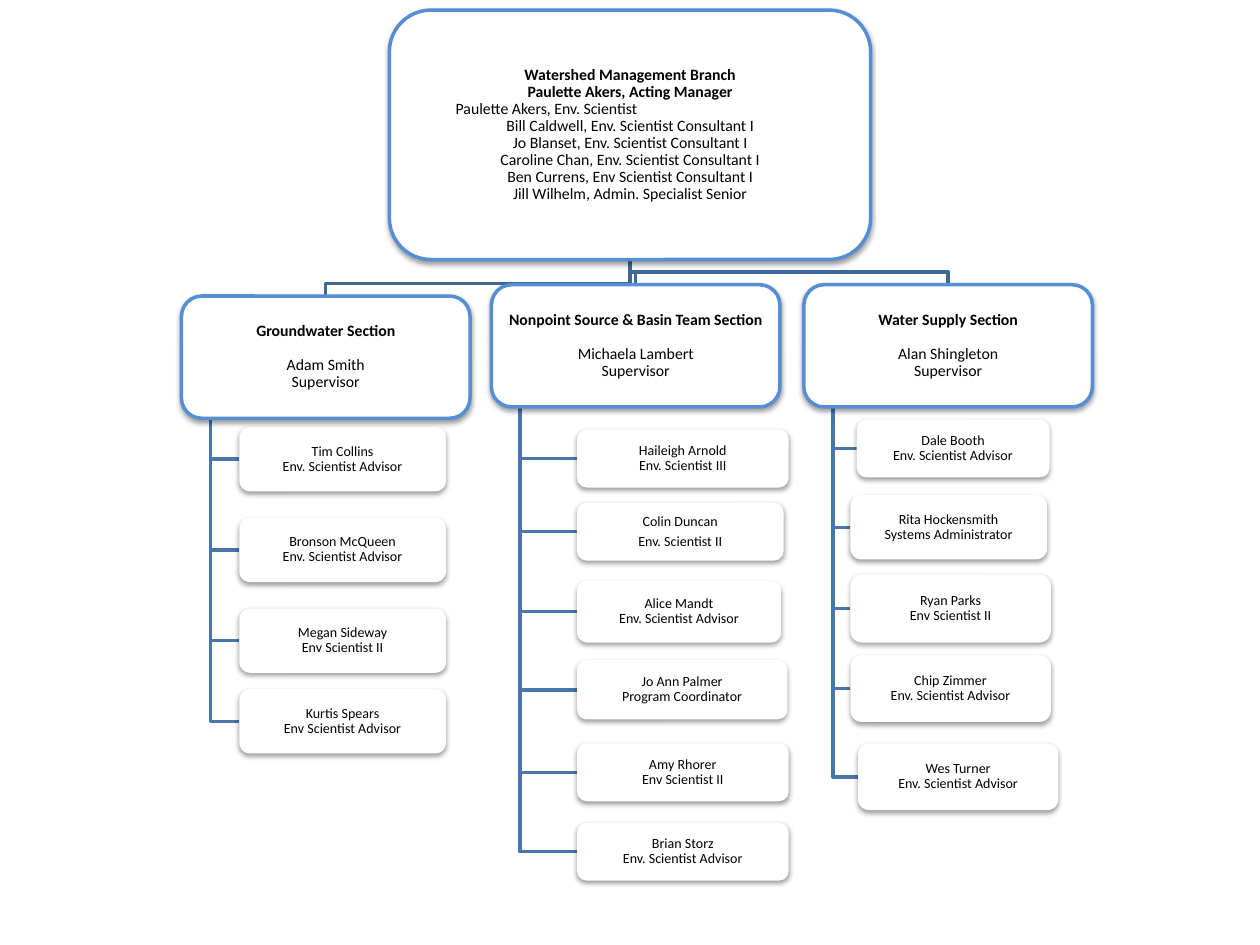
from dataclasses import dataclass

from lxml.etree import SubElement
from pptx import Presentation
from pptx.dml.color import RGBColor
from pptx.enum.shapes import MSO_SHAPE
from pptx.enum.text import MSO_ANCHOR, PP_ALIGN
from pptx.oxml.ns import qn
from pptx.util import Inches, Pt

COLORS = {
    "box": "FFFFFF",
    "border": "558ED5",
    "text": "000000",
    "branch_line": "3F6797",
    "staff_line": "4875AC",
    "shadow": "000000",
}
FONT = "Calibri"

# Grid of 100 columns by 75 rows; one unit is a column or a row
SLIDE_W, SLIDE_H = Inches(10), Inches(7.5)
UNIT = SLIDE_W / 100


@dataclass
class Box:
    x: float
    y: float
    w: float
    h: float

    @property
    def center(self):
        return self.x + self.w / 2

    @property
    def middle(self):
        return self.y + self.h / 2

    @property
    def bottom(self):
        return self.y + self.h

    def inner(self, dx, dy, w, h):
        return Box(self.x + dx, self.y + dy, w, h)


BRANCH_BOX = Box(30.9, 0.8, 38.2, 19.8)
BRANCH_HEADS = ["Watershed Management Branch", "Paulette Akers, Acting Manager"]
BRANCH_STAFF = [
    "Paulette Akers, Env. Scientist",
    "Bill Caldwell, Env. Scientist Consultant I",
    "Jo Blanset, Env. Scientist Consultant I",
    "Caroline Chan, Env. Scientist Consultant I",
    "Ben Currens, Env Scientist Consultant I",
    "Jill Wilhelm, Admin. Specialist Senior",
]

# Section: title, supervisor, left, top, staff
# Staff: name, role, offset in the section (dx, dy), width, height
SECTION_W, SECTION_H = 22.9, 9.7
ADVISOR = "Env. Scientist Advisor"
SECTIONS = [
    ("Groundwater Section", "Adam Smith", 14.4, 23.5, [
        ("Tim Collins", ADVISOR, 4.6, 10.4, 16.4, 5.1),
        ("Bronson McQueen", ADVISOR, 4.6, 17.6, 16.4, 5.1),
        ("Megan Sideway", "Env Scientist II", 4.6, 24.8, 16.4, 5.1),
        ("Kurtis Spears", "Env Scientist Advisor", 4.6, 31.2, 16.4, 5.1),
    ]),
    ("Nonpoint Source & Basin Team Section", "Michaela Lambert", 39, 22.6, [
        ("Haileigh Arnold", "Env. Scientist III", 6.8, 11.5, 16.8, 4.6),
        ("Colin Duncan", "Env. Scientist II", 6.8, 17.3, 16.4, 4.6),
        ("Alice Mandt", ADVISOR, 6.8, 23.5, 16.2, 4.9),
        ("Jo Ann Palmer", "Program Coordinator", 6.8, 29.8, 16.7, 4.7),
        ("Amy Rhorer", "Env Scientist II", 6.8, 36.4, 16.8, 4.6),
        ("Brian Storz", ADVISOR, 6.8, 42.7, 16.8, 4.6),
    ]),
    ("Water Supply Section", "Alan Shingleton", 63.8, 22.6, [
        ("Dale Booth", ADVISOR, 4.2, 10.7, 15.3, 4.6),
        ("Rita Hockensmith", "Systems Administrator", 3.7, 16.7, 15.6, 5.1),
        ("Ryan Parks", "Env Scientist II", 3.7, 23, 15.9, 5.4),
        ("Chip Zimmer", ADVISOR, 3.7, 29.4, 15.9, 5.3),
        ("Wes Turner", ADVISOR, 4.3, 36.4, 15.9, 5.3),
    ]),
]
LOOSE_CARDS = {"Colin Duncan"}  # cards with a gap between name and role


def rgb(name):
    return RGBColor.from_string(COLORS[name])


def emu(units):
    return round(units * UNIT)


def add_shadow(sp):
    effects = SubElement(sp._element.spPr, qn("a:effectLst"))
    outer = SubElement(effects, qn("a:outerShdw"), blurRad=str(Pt(3.1)),
                       dist=str(Pt(1.6)), dir="5400000", rotWithShape="0")
    color = SubElement(outer, qn("a:srgbClr"), val=COLORS["shadow"])
    SubElement(color, qn("a:alpha"), val="38000")


def add_box(slide, box, lines, size, bold_count=0, bordered=True):
    """Rounded box with centred lines, the first bold_count of them bold."""
    sp = slide.shapes.add_shape(MSO_SHAPE.ROUNDED_RECTANGLE, emu(box.x),
                                emu(box.y), emu(box.w), emu(box.h))
    sp.fill.solid()
    sp.fill.fore_color.rgb = rgb("box")
    if bordered:
        sp.line.color.rgb = rgb("border")
        sp.line.width = Pt(2)
    else:
        sp.line.fill.background()
    add_shadow(sp)
    tf = sp.text_frame
    tf.word_wrap = True
    tf.vertical_anchor = MSO_ANCHOR.MIDDLE
    tf.margin_left = tf.margin_right = Inches(0.01)
    tf.margin_top = tf.margin_bottom = Inches(0.01)
    tf.text = "\n".join(lines)
    for i, p in enumerate(tf.paragraphs):
        p.alignment = PP_ALIGN.CENTER
        p.line_spacing = 0.9
        p.font.name = FONT
        p.font.size = Pt(size)
        p.font.bold = i < bold_count
        p.font.color.rgb = rgb("text")
    return tf


def add_path(slide, points, color):
    """Open line with square corners through the grid points."""
    start, *rest = [(emu(x), emu(y)) for x, y in points]
    builder = slide.shapes.build_freeform(*start, scale=1.0)
    builder.add_line_segments(rest, close=False)
    sp = builder.convert_to_shape()
    sp.shadow.inherit = False
    sp.fill.background()
    sp.line.color.rgb = rgb(color)
    sp.line.width = Pt(2)


def add_branch(slide, box):
    tf = add_box(slide, box, BRANCH_HEADS + BRANCH_STAFF, 9, bold_count=2)
    p = tf.paragraphs[len(BRANCH_HEADS)]
    p.alignment = PP_ALIGN.LEFT
    p._p.get_or_add_pPr().set("marL", str(Inches(0.42)))


def add_section(slide, box, title, supervisor, staff):
    # Lines from the section down to each staff card
    trunk = box.x + box.w * 0.1
    cards = [(name, role, box.inner(*place)) for name, role, *place in staff]
    for _, _, card in cards:
        add_path(slide, [(trunk, box.bottom), (trunk, card.middle),
                         (card.x, card.middle)], "staff_line")

    # Section head
    tf = add_box(slide, box, [title, supervisor, "Supervisor"], 9, bold_count=1)
    tf.paragraphs[0].space_after = Pt(9.9)

    # Staff cards
    for name, role, card in cards:
        tf = add_box(slide, card, [name, role], 8, bordered=False)
        if name in LOOSE_CARDS:
            tf.paragraphs[0].space_after = Pt(2.8)


def main():
    prs = Presentation()
    prs.slide_width, prs.slide_height = SLIDE_W, SLIDE_H
    slide = prs.slides.add_slide(prs.slide_layouts[6])

    # Lines from the branch to the sections, bending one row above each
    boxes = [Box(x, y, SECTION_W, SECTION_H) for _, _, x, y, _ in SECTIONS]
    for box in boxes:
        bend = box.y - 1
        add_path(slide, [(BRANCH_BOX.center, BRANCH_BOX.bottom),
                         (BRANCH_BOX.center, bend), (box.center, bend),
                         (box.center, box.y)], "branch_line")

    add_branch(slide, BRANCH_BOX)
    for box, (title, supervisor, _, _, staff) in zip(boxes, SECTIONS):
        add_section(slide, box, title, supervisor, staff)
    prs.save("out.pptx")


if __name__ == "__main__":
    main()
